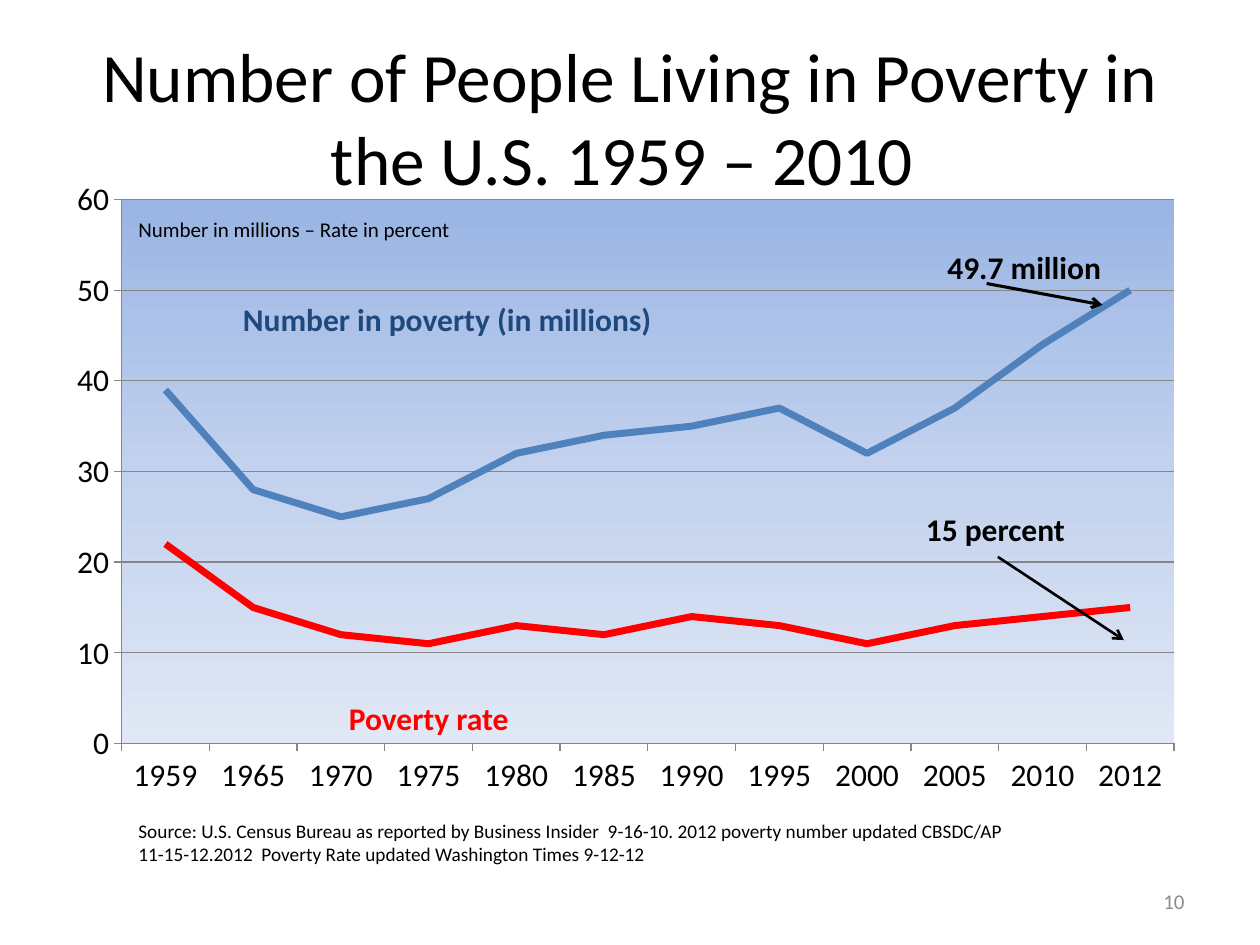
from lxml import etree
from pptx import Presentation
from pptx.chart.data import CategoryChartData
from pptx.dml.color import RGBColor
from pptx.enum.chart import XL_CHART_TYPE, XL_MARKER_STYLE, XL_TICK_MARK
from pptx.enum.shapes import MSO_CONNECTOR
from pptx.enum.text import MSO_ANCHOR, PP_ALIGN
from pptx.oxml import parse_xml
from pptx.oxml.ns import nsdecls, qn
from pptx.util import Pt

LINE = XL_CHART_TYPE.LINE
NO_MARKER = XL_MARKER_STYLE.NONE
TICK_OUT = XL_TICK_MARK.OUTSIDE
STRAIGHT = MSO_CONNECTOR.STRAIGHT
TOP, MIDDLE = MSO_ANCHOR.TOP, MSO_ANCHOR.MIDDLE
LEFT, CENTER, RIGHT = PP_ALIGN.LEFT, PP_ALIGN.CENTER, PP_ALIGN.RIGHT

PX = 9144  # 100 px to the inch
COLORS = {
    "text": "000000", "paper": "FFFFFF", "muted": "8C8C8C", "axis": "868686",
    "number": "4F81BD", "number_label": "1F497D", "rate": "FF0000",
    "plot_top": "9AB5E4", "plot_middle": "C2D1ED", "plot_bottom": "E1E8F5",
}


def rgb(name):
    return RGBColor.from_string(COLORS[name])


class SlideBuilder:
    font = "Calibri"

    def __init__(self, slide):
        self.slide = slide

    def style_font(self, font, size, color="text", bold=False):
        font.name = self.font
        font.size = Pt(size)
        font.bold = bold
        font.color.rgb = rgb(color)

    def text(self, box, words, size, color="text", bold=False,
             align=LEFT, anchor=TOP, fill=None):
        shape = self.slide.shapes.add_textbox(*(v * PX for v in box))
        if fill:
            shape.fill.solid()
            shape.fill.fore_color.rgb = rgb(fill)
        frame = shape.text_frame
        frame.word_wrap = True
        frame.vertical_anchor = anchor
        paragraph = frame.paragraphs[0]
        paragraph.alignment = align
        run = paragraph.add_run()
        run.text = words
        self.style_font(run.font, size, color, bold)

    def arrow(self, start, end, width):
        points = (v * PX for v in (*start, *end))
        arrow = self.slide.shapes.add_connector(STRAIGHT, *points)
        arrow.line.color.rgb = rgb("text")
        arrow.line.width = Pt(width)
        etree.SubElement(arrow.line._get_or_add_ln(), qn("a:tailEnd"), type="arrow")
        etree.SubElement(arrow._element.spPr, qn("a:effectLst"))

    def line_chart(self, box, categories, series, layout, gradient):
        data = CategoryChartData()
        data.categories = categories
        for name, _, values in series:
            data.add_series(name, values)
        frame = self.slide.shapes.add_chart(LINE, *(v * PX for v in box), data)
        chart = frame.chart
        chart.has_legend = False
        chart.has_title = False
        self.style_font(chart.font, 18)

        for axis in (chart.category_axis, chart.value_axis):
            axis.major_tick_mark = TICK_OUT
            axis.format.line.color.rgb = rgb("axis")
        value_axis = chart.value_axis
        value_axis.minimum_scale, value_axis.maximum_scale = 0, 60
        value_axis.major_unit = 10
        value_axis.has_major_gridlines = True
        value_axis.major_gridlines.format.line.color.rgb = rgb("axis")

        plot = chart.plots[0]
        plot.vary_by_categories = False
        for line, (_, color, _) in zip(plot.series, series):
            line.smooth = False
            line.marker.style = NO_MARKER
            line.format.line.color.rgb = rgb(color)
            line.format.line.width = Pt(4)
        self.plot_area(chart, layout, gradient)

    def plot_area(self, chart, layout, gradient):
        area = chart._chartSpace.chart.plotArea
        for old in area.findall(qn("c:layout")):
            area.remove(old)
        places = "".join(f'<c:{key} val="{value}"/>' for key, value in layout.items())
        area.insert(0, parse_xml(
            f'<c:layout {nsdecls("c")}><c:manualLayout><c:layoutTarget val="inner"/>'
            f'<c:xMode val="edge"/><c:yMode val="edge"/>{places}'
            '</c:manualLayout></c:layout>'))
        stops = "".join(
            f'<a:gs pos="{percent * 1000}"><a:srgbClr val="{COLORS[color]}"/></a:gs>'
            for percent, color in gradient)
        area.append(parse_xml(
            f'<c:spPr {nsdecls("c", "a")}><a:gradFill><a:gsLst>{stops}</a:gsLst>'
            '<a:lin ang="5400000" scaled="0"/></a:gradFill></c:spPr>'))


def main():
    deck = Presentation()
    deck.slide_width, deck.slide_height = 1000 * PX, 750 * PX
    page = SlideBuilder(deck.slides.add_slide(deck.slide_layouts[6]))

    # Title
    page.text((50, 30, 900, 125),
              "Number of People Living in Poverty in the U.S. 1959 – 2010 ",
              39.6, align=CENTER, anchor=MIDDLE, fill="paper")

    # Poverty chart
    years = ["1959", "1965", "1970", "1975", "1980", "1985",
             "1990", "1995", "2000", "2005", "2010", "2012"]
    poverty = [
        ("Series 1", "number", (39, 28, 25, 27, 32, 34, 35, 37, 32, 37, 44, 50)),
        ("Series 2", "rate", (22, 15, 12, 11, 13, 12, 14, 13, 11, 13, 14, 15)),
    ]
    page.line_chart((42, 133, 908, 508), years, poverty,
                    layout={"x": 0.06, "y": 0.05, "w": 0.92, "h": 0.85},
                    gradient=[(0, "plot_top"), (50, "plot_middle"), (100, "plot_bottom")])

    # Latest values with arrows
    page.text((742, 192, 158, 40), "49.7 million", 18, bold=True)
    page.arrow((783, 225), (875, 242), 1.75)
    page.text((725, 400, 150, 40), "15 percent", 18, bold=True)
    page.arrow((792, 442), (892, 508), 1.5)

    # Line labels and units
    page.text((183, 233, 367, 40), "Number in poverty (in millions)", 18,
              "number_label", bold=True)
    page.text((267, 550, 283, 40), "Poverty rate", 18, "rate", bold=True)
    page.text((100, 167, 483, 30), "Number in millions – Rate in percent", 12)

    # Source and page number
    page.text((100, 645, 725, 47),
              "Source: U.S. Census Bureau as reported by Business Insider  9-16-10. "
              "2012 poverty number updated CBSDC/AP 11-15-12.2012  "
              "Poverty Rate updated Washington Times 9-12-12", 11)
    page.text((717, 695, 233, 40), "10", 12, "muted", align=RIGHT, anchor=MIDDLE)

    deck.save("out.pptx")


if __name__ == "__main__":
    main()
